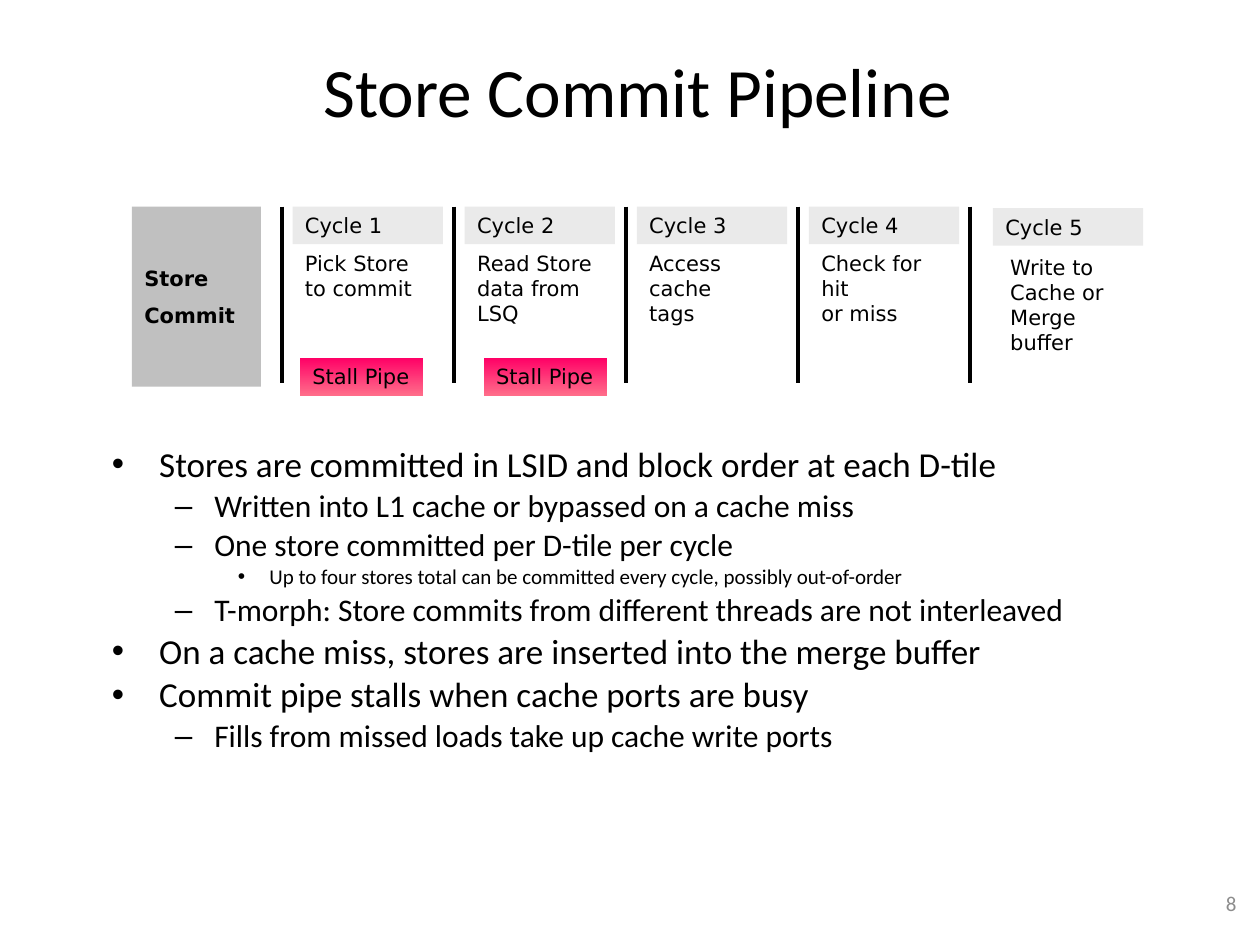
from lxml import etree
from pptx import Presentation
from pptx.dml.color import RGBColor
from pptx.enum import shapes, text
from pptx.oxml.ns import qn
from pptx.util import Pt

COLORS = {"ink": "000000", "number": "8C8C8C", "stage": "C0C0C0", "cycle": "EAEAEA",
          "stall_top": "FF0066", "stall_bottom": "FF6D8A"}
LEVELS = [
    {"size": 20, "margin": 27, "hang": 27, "bullet": "•"},
    {"size": 18, "margin": 58.5, "hang": 22.5, "bullet": "–"},
    {"size": 12, "margin": 90, "hang": 18, "bullet": "•"},
]
CYCLES = [
    ["Pick Store", "to commit"],
    ["Read Store data from LSQ"],
    ["Access cache", "tags"],
    ["Check for hit", "or miss"],
    ["Write to", "Cache or", "Merge buffer"],
]
POINTS = [
    (0, "Stores are committed in LSID and block order at each D-tile"),
    (1, "Written into L1 cache or bypassed on a cache miss"),
    (1, "One store committed per D-tile per cycle"),
    (2, "Up to four stores total can be committed every cycle, possibly out-of-order"),
    (1, "T-morph: Store commits from different threads are not interleaved"),
    (0, "On a cache miss, stores are inserted into the merge buffer"),
    (0, "Commit pipe stalls when cache ports are busy"),
    (1, "Fills from missed loads take up cache write ports"),
]
TOP, PITCH = 118.1, 98.35
MIDDLE = text.MSO_ANCHOR.MIDDLE


def rgb(name):
    return RGBColor.from_string(COLORS[name])


def assign(target, values):
    for name, value in values.items():
        setattr(target, name, value)


class Board:
    """Draws styled elements on the current slide, with lengths in points."""

    def __init__(self, slide):
        self.slide = slide
        self.diagram = {"name": "DejaVu Sans", "size": Pt(12)}
        self.prose = {"name": "Calibri"}

    def fill_text(self, shape, lines, font, color="ink", align=text.PP_ALIGN.LEFT,
                  anchor=text.MSO_ANCHOR.TOP, gap=0, wrap=True):
        frame = shape.text_frame
        assign(frame, {"word_wrap": wrap, "vertical_anchor": anchor})
        for index, line in enumerate(lines):
            paragraph = frame.add_paragraph() if index else frame.paragraphs[0]
            assign(paragraph, {"alignment": align, "space_before": Pt(gap if index else 0)})
            run = paragraph.add_run()
            run.text = line
            assign(run.font, font)
            run.font.color.rgb = rgb(color)
        return frame

    def label(self, box, lines, font, **style):
        shape = self.slide.shapes.add_textbox(*map(Pt, box))
        return self.fill_text(shape, lines, font, **style)

    def block(self, box, lines, fills, font=None, **style):
        shape = self.slide.shapes.add_shape(shapes.MSO_SHAPE.RECTANGLE, *map(Pt, box))
        shape.shadow.inherit = False
        shape.line.fill.background()
        if len(fills) == 1:
            shape.fill.solid()
            shape.fill.fore_color.rgb = rgb(fills[0])
        else:
            shape.fill.gradient()
            shape.fill.gradient_angle = 270
            for stop, name in zip(shape.fill.gradient_stops, fills):
                stop.color.rgb = rgb(name)
        self.fill_text(shape, lines, font or self.diagram, **style)

    def divider(self, x, top, bottom):
        line = self.slide.shapes.add_connector(
            shapes.MSO_CONNECTOR.STRAIGHT, *map(Pt, (x, top, x, bottom)))
        line.line.width = Pt(2.25)
        line.line.color.rgb = rgb("ink")
        etree.SubElement(line._element.spPr, qn("a:effectLst"))

    def outline(self, box, points):
        frame = self.label(box, [line for _, line in points], self.prose)
        for index, (level, _) in enumerate(points):
            look = LEVELS[level]
            paragraph = frame.paragraphs[index]
            assign(paragraph, {"level": level, "line_spacing": 0.9,
                               "space_before": Pt(0.16 * look["size"] if index else 0)})
            paragraph.runs[0].font.size = Pt(look["size"])
            properties = paragraph._p.get_or_add_pPr()
            properties.set("marL", str(Pt(look["margin"])))
            properties.set("indent", str(-Pt(look["hang"])))
            etree.SubElement(properties, qn("a:buFont"), typeface="Arial")
            etree.SubElement(properties, qn("a:buChar"), char=look["bullet"])


def main():
    deck = Presentation()
    assign(deck, {"slide_width": Pt(720), "slide_height": Pt(540)})
    board = Board(deck.slides.add_slide(deck.slide_layouts[6]))

    board.label((563.8, 498.2, 149.8, 36), ["8"], {**board.prose, "size": Pt(12)},
                color="number", align=text.PP_ALIGN.RIGHT, anchor=MIDDLE)
    board.label((24, 30.2, 672, 41.8), [" Store Commit Pipeline"],
                {**board.prose, "size": Pt(39.6)}, align=text.PP_ALIGN.CENTER, anchor=MIDDLE)
    board.outline((56.9, 252, 633.6, 218.9), POINTS)

    board.block((75.4, TOP, 73.7, 102.8), ["Store", "Commit"], ["stage"],
                {**board.diagram, "bold": True}, anchor=MIDDLE, gap=6.6)
    for index, task in enumerate(CYCLES):
        last = index == len(CYCLES) - 1
        left = 567.4 if last else 167.2 + index * PITCH
        top = TOP + (0.9 if last else 0)
        board.divider(161.1 + index * PITCH, TOP, 218.9)
        board.block((left, top, 85.9, 21.5), [f"Cycle {index + 1}"], ["cycle"])
        task_left, task_top = (570.2, 141.7) if last else (left, 139.7)
        board.label((task_left, task_top, 79.9, 50), task, board.diagram)
    for left in (171.4, 276.5):
        board.block((left, 204.5, 70.3, 21.5), ["Stall Pipe"],
                    ["stall_top", "stall_bottom"], wrap=False)

    deck.save("out.pptx")


if __name__ == "__main__":
    main()
